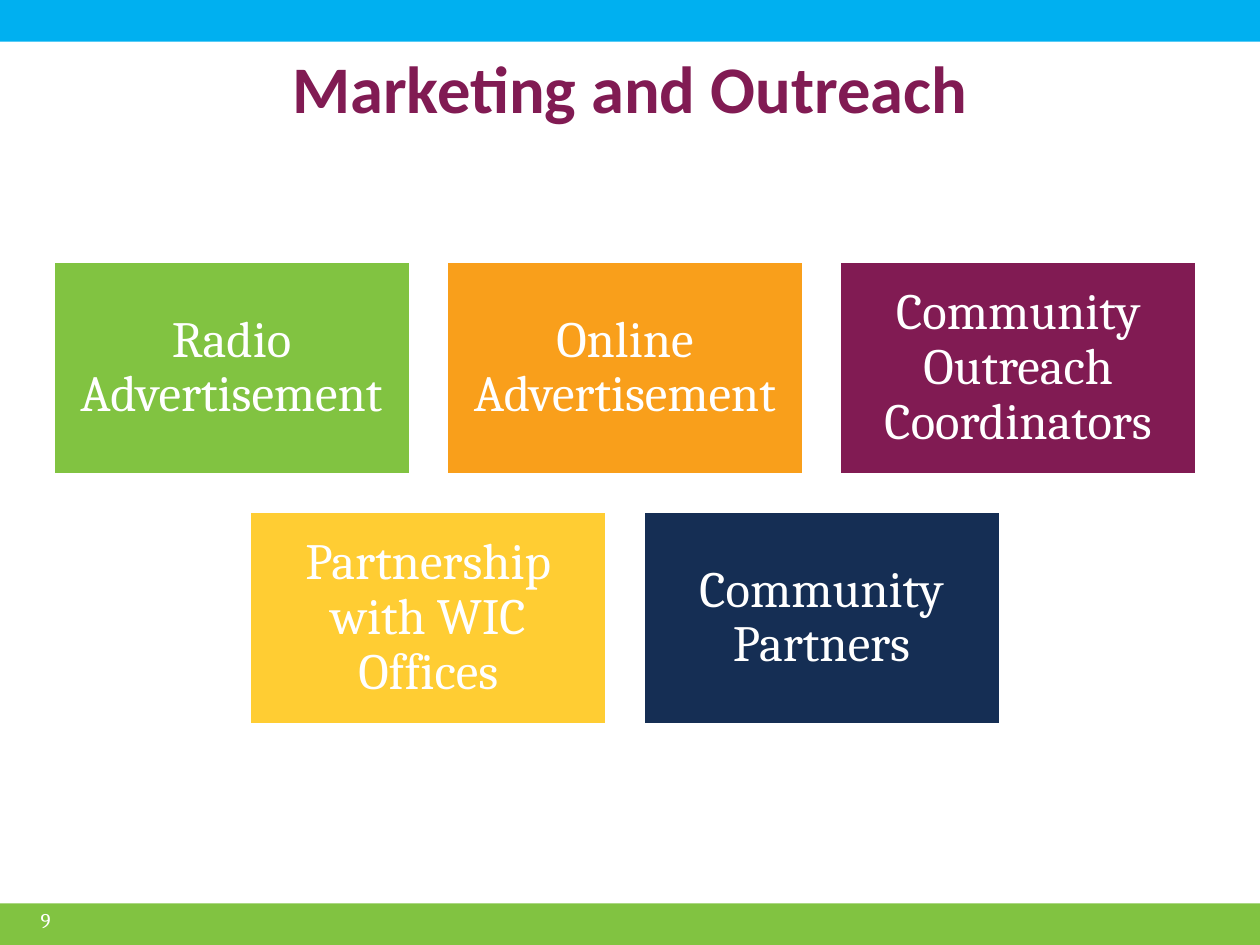
from dataclasses import dataclass

from pptx import Presentation
from pptx.dml.color import RGBColor
from pptx.enum.shapes import MSO_SHAPE as SHAPE
from pptx.enum.text import MSO_ANCHOR as ANCHOR, PP_ALIGN as ALIGN
from pptx.util import Cm, Pt


@dataclass(frozen=True)
class Theme:
    white: str = "FFFFFF"
    sky: str = "00B0F0"
    green: str = "81C341"
    orange: str = "F99F1B"
    plum: str = "811B53"
    yellow: str = "FFCD33"
    navy: str = "152E54"
    heading: str = "Calibri"
    body: str = "Cambria"
    title_size: int = 38
    card_size: int = 29
    number_size: int = 12


THEME = Theme()
SLIDE_W, SLIDE_H = 25.4, 19.05
BAND_H = 0.84
CARD_W, CARD_H, GAP = 7.21, 4.32, 0.72
CARDS_CENTER, CARDS_TOP = 12.6, 5.26
CARD_ROWS = [
    [("Radio Advertisement", THEME.green),
     ("Online Advertisement", THEME.orange),
     ("Community Outreach Coordinators", THEME.plum)],
    [("Partnership with WIC Offices", THEME.yellow),
     ("Community Partners", THEME.navy)],
]


def write(sp, text, font, size, color, align, bold=False):
    tf = sp.text_frame
    tf.word_wrap = True
    tf.vertical_anchor = ANCHOR.MIDDLE
    p = tf.paragraphs[0]
    p.text = text
    p.alignment = align
    p.font.name = font
    p.font.size = Pt(size)
    p.font.bold = bold
    p.font.color.rgb = RGBColor.from_string(color)
    return tf


def add_rect(slide, x, y, w, h, color):
    sp = slide.shapes.add_shape(SHAPE.RECTANGLE, Cm(x), Cm(y), Cm(w), Cm(h))
    sp.shadow.inherit = False
    sp.fill.solid()
    sp.fill.fore_color.rgb = RGBColor.from_string(color)
    sp.line.fill.background()
    return sp


def add_card(slide, x, y, text, color):
    sp = add_rect(slide, x, y, CARD_W, CARD_H, color)
    sp.line.color.rgb = RGBColor.from_string(THEME.white)
    sp.line.width = Pt(2)
    tf = write(sp, text, THEME.body, THEME.card_size, THEME.white, ALIGN.CENTER)
    tf.margin_left = tf.margin_right = tf.margin_top = tf.margin_bottom = Cm(0.3)
    tf.paragraphs[0].line_spacing = 0.9


def add_cards(slide):
    for row, cards in enumerate(CARD_ROWS):
        row_w = len(cards) * (CARD_W + GAP) - GAP
        left = CARDS_CENTER - row_w / 2
        top = CARDS_TOP + row * (CARD_H + GAP)
        for col, (text, color) in enumerate(cards):
            add_card(slide, left + col * (CARD_W + GAP), top, text, color)


def set_title(slide, text):
    sp = slide.shapes.title
    sp.left, sp.top, sp.width, sp.height = Cm(1.27), Cm(0.76), Cm(22.86), Cm(1.98)
    write(sp, text, THEME.heading, THEME.title_size, THEME.plum, ALIGN.CENTER, bold=True)


def add_page_number(slide, number):
    sp = slide.shapes.add_textbox(Cm(0.2), Cm(18.03), Cm(1.07), Cm(1.02))
    write(sp, number, THEME.body, THEME.number_size, THEME.white, ALIGN.RIGHT)


def main():
    prs = Presentation()
    prs.slide_width, prs.slide_height = Cm(SLIDE_W), Cm(SLIDE_H)
    slide = prs.slides.add_slide(prs.slide_layouts[5])
    add_rect(slide, 0, 0, SLIDE_W, BAND_H, THEME.sky)
    add_rect(slide, 0, SLIDE_H - BAND_H, SLIDE_W, BAND_H, THEME.green)
    set_title(slide, "Marketing and Outreach")
    add_cards(slide)
    add_page_number(slide, "9")
    prs.save("out.pptx")


if __name__ == "__main__":
    main()
